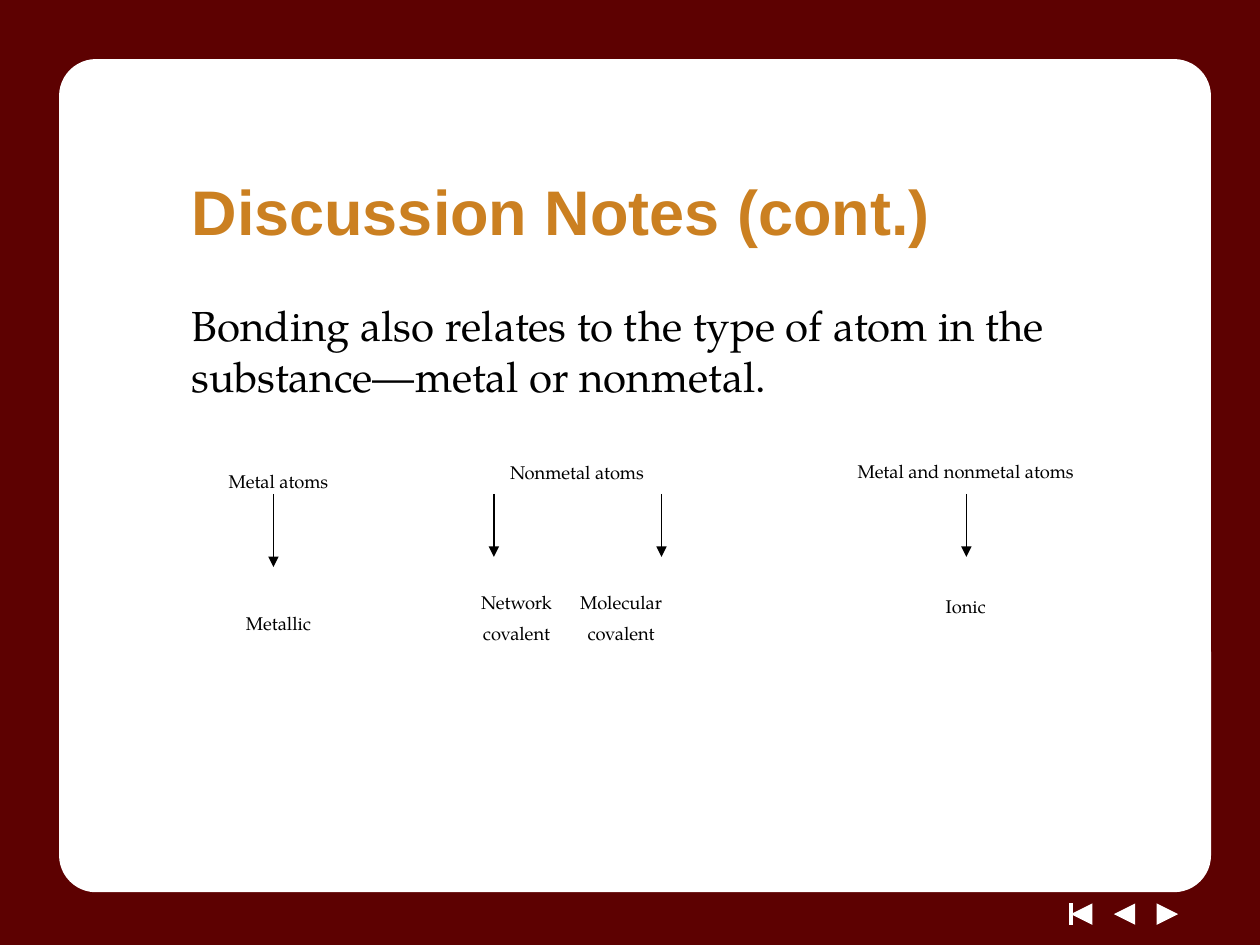
from lxml import etree
from pptx import Presentation
from pptx.dml.color import RGBColor
from pptx.enum.shapes import MSO_CONNECTOR, MSO_SHAPE
from pptx.enum.text import MSO_ANCHOR, MSO_AUTO_SIZE, PP_ALIGN
from pptx.oxml.ns import qn
from pptx.util import Inches, Pt

STRAIGHT = MSO_CONNECTOR.STRAIGHT
RECTANGLE = MSO_SHAPE.RECTANGLE
ROUNDED = MSO_SHAPE.ROUNDED_RECTANGLE
TRIANGLE = MSO_SHAPE.ISOSCELES_TRIANGLE
TOP, MIDDLE = MSO_ANCHOR.TOP, MSO_ANCHOR.MIDDLE
NO_FIT = MSO_AUTO_SIZE.NONE
LEFT, CENTER = PP_ALIGN.LEFT, PP_ALIGN.CENTER

COLORS = {"maroon": "5D0101", "white": "FFFFFF", "gold": "CB8021", "black": "000000"}
SERIF = "TeX Gyre Pagella"
TITLE_FONT = {"name": "Arial", "size": Pt(36), "bold": True}
BODY_FONT = {"name": SERIF, "size": Pt(24), "bold": False}
LABEL_FONT = {"name": SERIF, "size": Pt(10.5), "bold": False}

ARROW_TOP = 3.92
BOND_GROUPS = [
    {"box": (1.25, 3.5, 1.92, 1.48), "inset": 0.23,
     "rows": [("Metal atoms", 0), ("Metallic", 69)],
     "arrows": [2.17], "arrow_end": 4.5},
    {"box": (3.08, 3.47, 3, 2.26), "inset": 0.19,
     "rows": [("Nonmetal atoms", 0), ("\tNetwork\tMolecular", 62), ("\tcovalent\tcovalent", 5)],
     "arrows": [3.92, 5.25], "arrow_end": 4.42, "columns": (1.02, 1.85)},
    {"box": (6.08, 3.48, 3.17, 2.1), "inset": 0.17,
     "rows": [("Metal and nonmetal atoms", 0), ("Ionic", 65)],
     "arrows": [7.67], "arrow_end": 4.42},
]


def rgb(color):
    """Return the named palette colour."""
    return RGBColor.from_string(COLORS[color])


def apply(target, values):
    """Set every attribute in values on target."""
    for attribute, value in values.items():
        setattr(target, attribute, value)


def style_font(font, values, color):
    """Give a font its format values and colour."""
    apply(font, values)
    font.color.rgb = rgb(color)


def add_block(slide, preset, box, color, rotation=0):
    """Add a flat filled shape in the given box."""
    block = slide.shapes.add_shape(preset, *map(Inches, box))
    block.shadow.inherit = False
    block.fill.solid()
    block.fill.fore_color.rgb = rgb(color)
    block.line.fill.background()
    block.rotation = rotation
    return block


def add_line(slide, start, end, color, width):
    """Add a straight line without a shadow."""
    line = slide.shapes.add_connector(STRAIGHT, *map(Inches, start + end))
    line.line.color.rgb = rgb(color)
    line.line.width = Pt(width)
    etree.SubElement(line._element.spPr, qn("a:effectLst"))
    return line


def add_arrow(slide, x, top, bottom):
    """Add a thin downward arrow."""
    arrow = add_line(slide, (x, top), (x, bottom), "black", 0.75)
    etree.SubElement(arrow.line._get_or_add_ln(), qn("a:tailEnd"), type="triangle")


def add_frame(slide, width, height):
    """Draw the maroon border and the rounded white panel."""
    add_block(slide, RECTANGLE, (0, 0, width, height), "maroon")
    panel = add_block(slide, ROUNDED, (0.5, 0.5, width - 0.92, height - 0.95), "white")
    panel.adjustments[0] = 0.04
    panel.line.color.rgb = rgb("white")
    panel.line.width = Pt(4.5)


def add_navigation(slide, left, top, size):
    """Draw the first, previous and next symbols."""
    for index, rotation in enumerate((270, 270, 90)):
        box = (left + index * size * 2, top, size, size)
        add_block(slide, TRIANGLE, box, "white", rotation)
    add_line(slide, (left, top), (left, top + size), "white", 2)


def fill_placeholder(slide, placeholder, box, text, font, color, anchor):
    """Place a placeholder in front of the frame and fill it with plain text."""
    slide.shapes._spTree.append(placeholder._element)
    apply(placeholder, dict(zip(("left", "top", "width", "height"), map(Inches, box))))
    frame = placeholder.text_frame
    frame.text = text
    apply(frame, {"auto_size": NO_FIT, "vertical_anchor": anchor, "word_wrap": True})
    paragraph = frame.paragraphs[0]
    paragraph.alignment = LEFT
    style_font(paragraph.runs[0].font, font, color)
    return paragraph


def remove_bullet(paragraph):
    """Drop the bullet and its hanging indent."""
    properties = paragraph._p.get_or_add_pPr()
    properties.set("marL", "0")
    properties.set("indent", "0")
    etree.SubElement(properties, qn("a:buNone"))


def add_column_stops(paragraph, columns):
    """Centre tabbed text on the given column positions."""
    paragraph.alignment = LEFT
    stops = etree.SubElement(paragraph._p.get_or_add_pPr(), qn("a:tabLst"))
    for column in columns:
        etree.SubElement(stops, qn("a:tab"), pos=str(Inches(column)), algn="ctr")


def add_bond_group(slide, box, inset, rows, arrows, arrow_end, columns=()):
    """Add one kind of atom, its arrows and the bonding it leads to."""
    frame = slide.shapes.add_textbox(*map(Inches, box)).text_frame
    apply(frame, {"word_wrap": True, "vertical_anchor": TOP, "margin_left": 0,
                  "margin_right": 0, "margin_top": Inches(inset)})
    for index, (label, gap) in enumerate(rows):
        paragraph = frame.add_paragraph() if index else frame.paragraphs[0]
        apply(paragraph, {"alignment": CENTER, "line_spacing": Pt(12.5),
                          "space_before": Pt(gap)})
        if "\t" in label:
            add_column_stops(paragraph, columns)
        run = paragraph.add_run()
        run.text = label
        style_font(run.font, LABEL_FONT, "black")
    for x in arrows:
        add_arrow(slide, x, ARROW_TOP, arrow_end)


def main():
    """Build the slide and save it."""
    deck = Presentation()
    width, height = 10, 7.5
    apply(deck, {"slide_width": Inches(width), "slide_height": Inches(height)})
    slide = deck.slides.add_slide(deck.slide_layouts[1])
    add_frame(slide, width, height)
    add_navigation(slide, 8.5, 7.17, 0.17)
    fill_placeholder(slide, slide.shapes.title, (1.42, 1.17, 8.08, 1),
                     "Discussion Notes (cont.)", TITLE_FONT, "gold", MIDDLE)
    statement = fill_placeholder(
        slide, slide.placeholders[1], (1.42, 2.33, 7.92, 4),
        "Bonding also relates to the type of atom in the substance—metal or nonmetal.",
        BODY_FONT, "black", TOP)
    remove_bullet(statement)
    for group in BOND_GROUPS:
        add_bond_group(slide, **group)
    deck.save("out.pptx")


if __name__ == "__main__":
    main()
